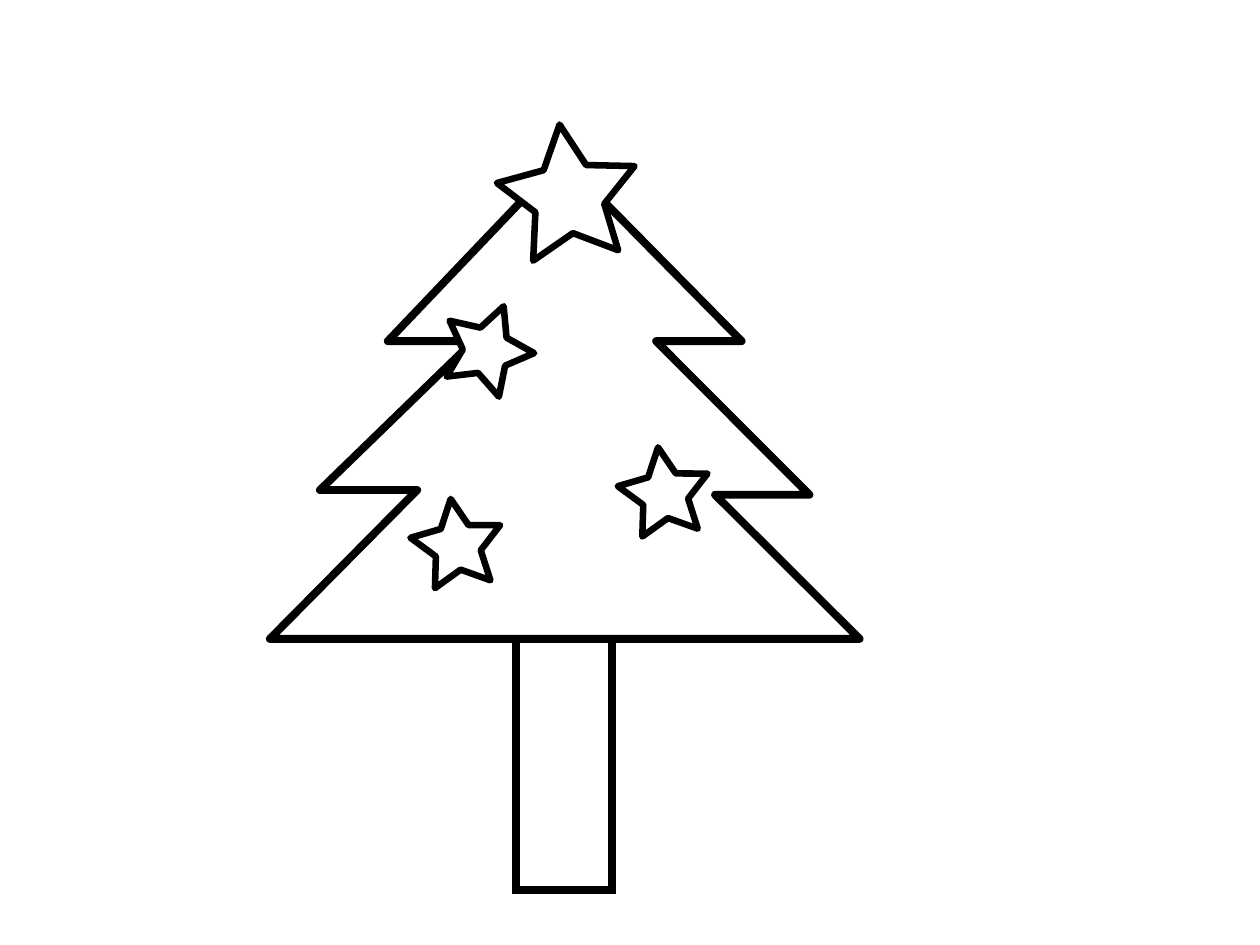
from math import cos, radians, sin

from lxml.etree import SubElement
from pptx import Presentation
from pptx.dml.color import RGBColor
from pptx.enum.shapes import MSO_SHAPE as Preset
from pptx.oxml.ns import qn
from pptx.util import Cm, Pt


def color(hex_code):
    """Turn a hex string into a colour."""
    return RGBColor.from_string(hex_code)


def style(part, width, join):
    """Give a part a white fill and a black outline with the given corners."""
    part.shadow.inherit = False
    part.fill.solid()
    part.fill.fore_color.rgb = color("FFFFFF")
    part.line.color.rgb = color("000000")
    part.line.width = Pt(width)
    corner = SubElement(part.line._get_or_add_ln(), qn(f"a:{join}"))
    if join == "miter":
        corner.set("lim", "800000")


def add_outline(slide, points, width):
    """Draw a closed outline through points given in centimetres."""
    start, *others = [(Cm(x), Cm(y)) for x, y in points]
    builder = slide.shapes.build_freeform(*start)
    builder.add_line_segments(others, close=True)
    style(builder.convert_to_shape(), width, "round")


def add_trunk(slide, left, top, width, height):
    """Draw the trunk in its box."""
    box = [Cm(length) for length in (left, top, width, height)]
    style(slide.shapes.add_shape(Preset.RECTANGLE, *box), 4.5, "miter")


def add_branches(slide, left, top, width, height):
    """Draw the three tiers of branches in their box."""
    corners = [
        (0.495, 0), (0.2, 0.38), (0.345, 0.38), (0.085, 0.69),
        (0.25, 0.69), (0, 1), (1, 1), (0.755, 0.7),
        (0.915, 0.7), (0.655, 0.38), (0.8, 0.38),
    ]
    points = [(left + x * width, top + y * height) for x, y in corners]
    add_outline(slide, points, 4.5)


def add_star(slide, left, top, size, tilt):
    """Draw a five-pointed star in a square box, tilted by some degrees."""
    outer = size / 2
    points = []
    for step in range(10):
        radius = outer / 2 if step % 2 else outer
        angle = radians(tilt + 36 * step)
        points.append((left + outer + radius * sin(angle),
                       top + outer - radius * cos(angle)))
    add_outline(slide, points, 3.75)


def main():
    """Build the Christmas tree slide."""
    deck = Presentation()
    deck.slide_width, deck.slide_height = Cm(25.4), Cm(19.05)
    slide = deck.slides.add_slide(deck.slide_layouts[6])
    add_trunk(slide, 10.41, 12.83, 1.93, 5.11)
    add_branches(slide, 5.44, 3.2, 11.89, 9.68)
    add_star(slide, 9.99, 2.5, 2.94, -7)
    for left, top, tilt in [(12.44, 9.01, -8), (8.85, 6.11, 21), (8.26, 10.05, -8)]:
        add_star(slide, left, top, 1.92, tilt)
    deck.save("out.pptx")


if __name__ == "__main__":
    main()
